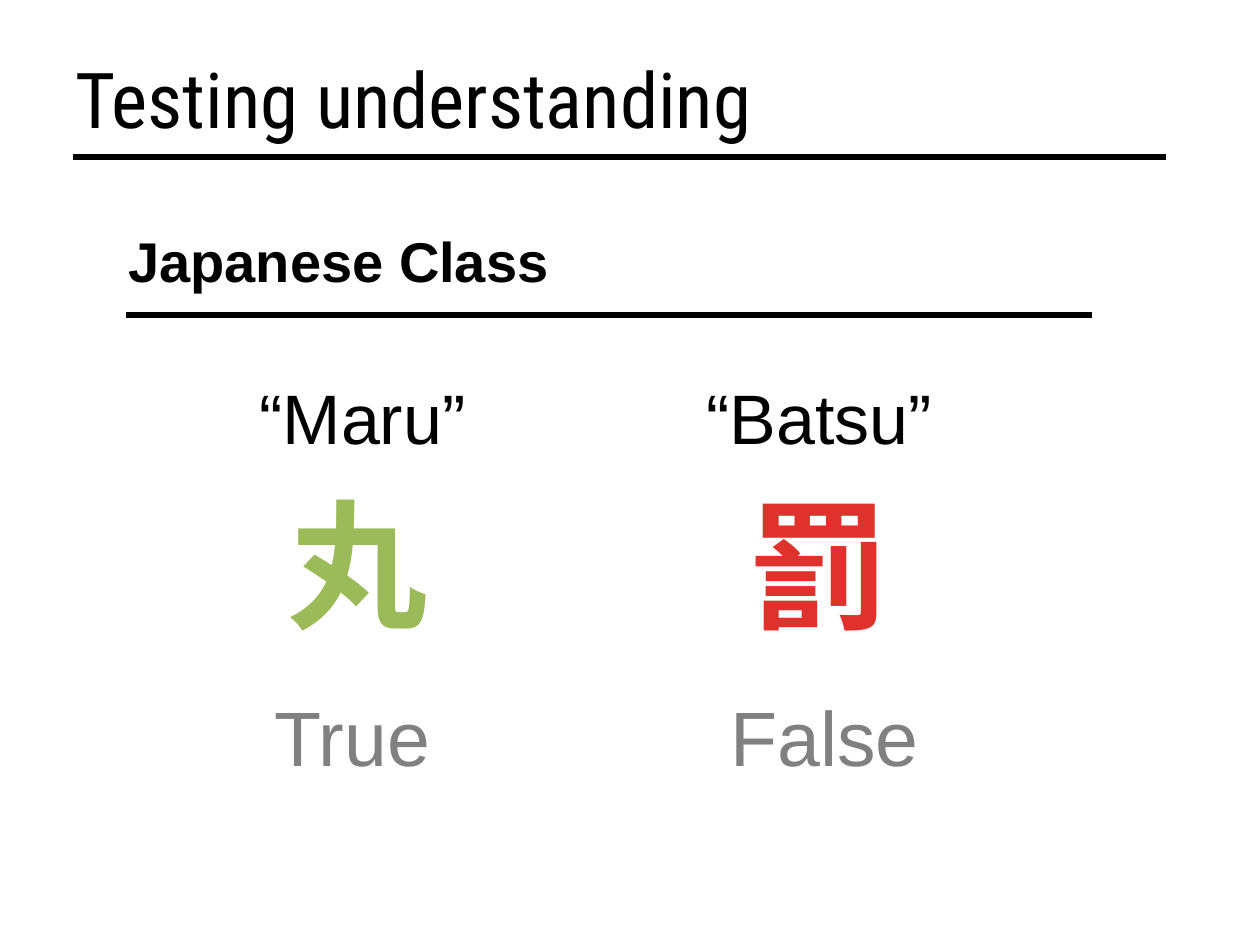
from dataclasses import dataclass

from pptx import Presentation
from pptx.dml.color import RGBColor
from pptx.enum.shapes import MSO_CONNECTOR
from pptx.enum.text import MSO_ANCHOR, PP_ALIGN
from pptx.oxml.ns import qn
from pptx.slide import Slide
from pptx.util import Pt
from lxml import etree

PX = 914400 // 126  # EMU in one px
STRAIGHT = MSO_CONNECTOR.STRAIGHT
TOP, MIDDLE = MSO_ANCHOR.TOP, MSO_ANCHOR.MIDDLE
LEFT, CENTER = PP_ALIGN.LEFT, PP_ALIGN.CENTER

COLORS = {
    "black": "000000",
    "green": "9BBB59",
    "red": "E0322D",
    "gray": "808080",
}


@dataclass
class Label:
    text: str
    left: int
    top: int
    width: int
    height: int
    size: int
    color: str = "black"
    font: str = "Arial"
    bold: bool = False
    align: PP_ALIGN = CENTER
    anchor: MSO_ANCHOR = TOP
    indent: int = 63
    before: int = 4
    after: int = 18
    tracking: float = 0


@dataclass
class Rule:
    left: int
    right: int
    y: int


HEADINGS = [
    Label("Testing understanding", 63, 38, 1134, 120, 44, font="Roboto Condensed",
          align=LEFT, anchor=MIDDLE, indent=0, before=0, after=0),
    Label("Japanese Class", 116, 220, 1050, 105, 32, bold=True,
          align=LEFT, indent=0, after=0),
]

RULES = [Rule(73, 1166, 157), Rule(126, 1092, 315)]

# Word, character and meaning for each answer
ANSWERS = [
    Label("“Maru”", 126, 368, 410, 126, 40),
    Label("“Batsu”", 620, 368, 335, 126, 40),
    Label("丸", 126, 472, 400, 189, 80, "green", bold=True, tracking=0.5),
    Label("罰", 588, 472, 400, 189, 80, "red", "Calibri", bold=True, tracking=0.5),
    Label("True", 106, 683, 430, 126, 44, "gray"),
    Label("False", 578, 683, 430, 126, 44, "gray"),
]


def add_label(slide: Slide, label: Label) -> None:
    box = slide.shapes.add_textbox(label.left * PX, label.top * PX,
                                   label.width * PX, label.height * PX)
    frame = box.text_frame
    frame.word_wrap = True
    frame.vertical_anchor = label.anchor
    paragraph = frame.paragraphs[0]
    paragraph.alignment = label.align
    paragraph.space_before = Pt(label.before)
    paragraph.space_after = Pt(label.after)
    if label.indent:
        paragraph.level = 1
        properties = paragraph._p.get_or_add_pPr()
        properties.set("marL", str(label.indent * PX))
        properties.set("indent", "0")
    run = paragraph.add_run()
    run.text = label.text
    run.font.name = label.font
    run.font.size = Pt(label.size)
    run.font.bold = label.bold
    run.font.color.rgb = RGBColor.from_string(COLORS[label.color])
    if label.tracking:
        run._r.get_or_add_rPr().set("spc", str(int(label.tracking * 100)))


def add_rule(slide: Slide, rule: Rule) -> None:
    line = slide.shapes.add_connector(STRAIGHT, rule.left * PX, rule.y * PX,
                                      rule.right * PX, rule.y * PX)
    line.line.width = Pt(3)
    line.line.color.rgb = RGBColor.from_string(COLORS["black"])
    etree.SubElement(line._element.spPr, qn("a:effectLst"))


def main() -> None:
    presentation = Presentation()
    presentation.slide_width = 1260 * PX
    presentation.slide_height = 945 * PX
    slide = presentation.slides.add_slide(presentation.slide_layouts[6])

    # Headings and the rules under them
    for heading in HEADINGS:
        add_label(slide, heading)
    for rule in RULES:
        add_rule(slide, rule)

    # The two answers side by side
    for answer in ANSWERS:
        add_label(slide, answer)

    presentation.save("out.pptx")


if __name__ == "__main__":
    main()
